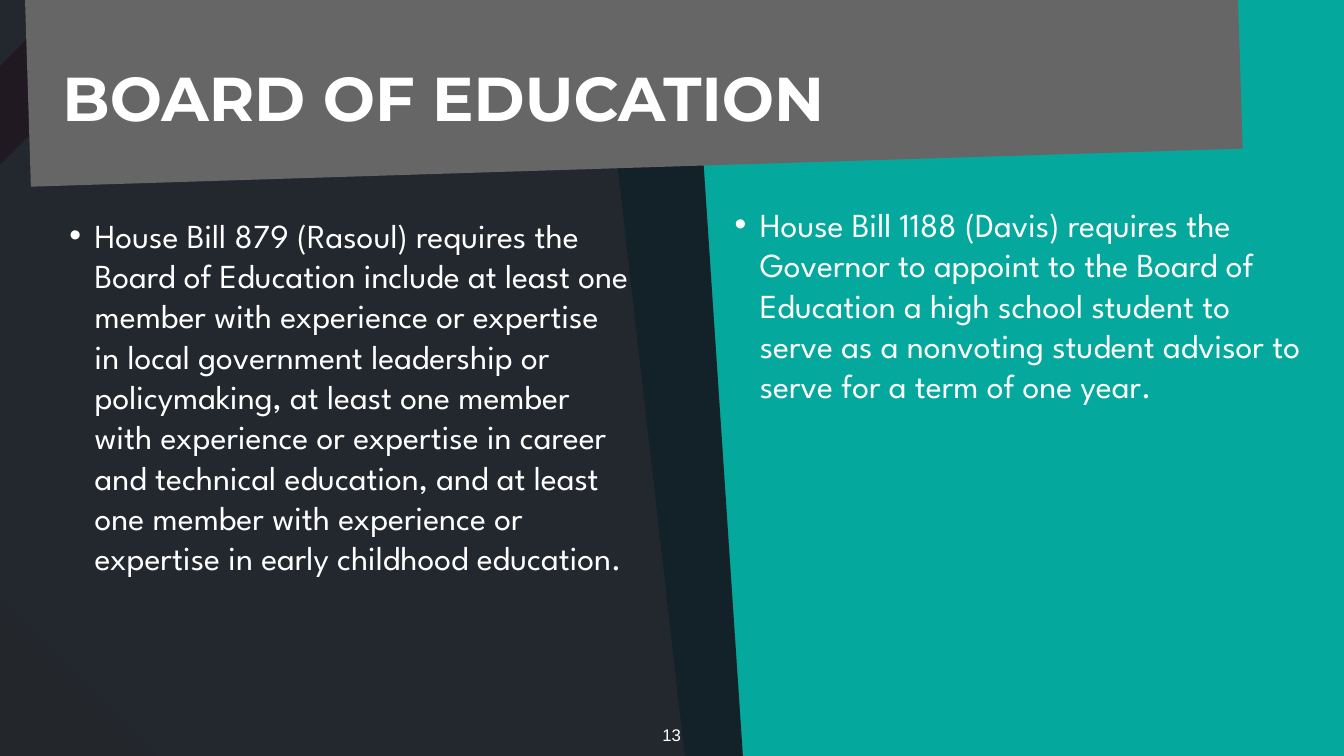
"""Build the Board of Education slide."""
from dataclasses import dataclass

from lxml.etree import SubElement
from pptx import Presentation
from pptx.dml.color import RGBColor
from pptx.enum.shapes import MSO_SHAPE as Shape
from pptx.enum.text import MSO_ANCHOR as Anchor, MSO_AUTO_SIZE as Fit, PP_ALIGN as Align
from pptx.oxml.ns import qn
from pptx.util import Inches, Pt

WIDTH, HEIGHT = Inches(26.67), Inches(15)
WHITE = "FFFFFF"


@dataclass
class Box:
    """A frame in percent of the slide's width and height."""
    left: float
    top: float
    width: float
    height: float

    def frame(self) -> dict:
        """Return the frame as position and size attributes."""
        return {"left": round(WIDTH * self.left / 100), "top": round(HEIGHT * self.top / 100),
                "width": round(WIDTH * self.width / 100), "height": round(HEIGHT * self.height / 100)}


@dataclass
class Panel:
    """A tilted flat panel, with its opacity in percent."""
    box: Box
    tilt: float
    color: str
    opacity: int = 100
    kind: Shape = Shape.RECTANGLE


@dataclass
class Text:
    """A paragraph with its frame and format."""
    box: Box
    words: str
    size: float
    font: str
    inset: float = 0.06
    bold: bool = False
    bullet: bool = False
    align: Align = Align.LEFT
    anchor: Anchor = Anchor.TOP
    spacing: float = 1.0


PANELS = [
    Panel(Box(-8.29, -0.2, 28.76, 9.27), 315, "C92D3A"),
    Panel(Box(-9.82, 85.13, 21.86, 19.47), 225, "ECE4B8"),
    Panel(Box(-46.46, 6.87, 49.27, 142.6), 315, "D5D5D5", 6, Shape.ROUNDED_RECTANGLE),
    Panel(Box(47.28, -33.67, 59.36, 146.8), 353.5, "05A89D"),
    Panel(Box(-14.55, -12.4, 68.05, 133.6), 356.2, "141820", 93),
    Panel(Box(1.39, -78.4, 90.21, 100.6), 358.2, "666666"),
]
TITLE = Text(Box(4.42, 1.73, 90.1, 16.27), "BOARD OF EDUCATION", 88.4, "Montserrat",
             bold=True, anchor=Anchor.BOTTOM, spacing=0.8)
BILLS = [
    (Box(54.29, 26.33, 43.46, 69.87),
     "House Bill 1188 (Davis) requires the Governor to appoint to the Board of Education "
     "a high school student to serve as a nonvoting student advisor to serve for a term of one year."),
    (Box(4.8, 27.73, 42.56, 69.87),
     "House Bill 879 (Rasoul) requires the Board of Education include at least one member with "
     "experience or expertise in local government leadership or policymaking, at least one member "
     "with experience or expertise in career and technical education, and at least one member "
     "with experience or expertise in early childhood education."),
]
PAGE = Text(Box(49.04, 95.4, 1.87, 3.47), "13", 24, "Arial", align=Align.CENTER)


def assign(target, values: dict) -> None:
    """Set each named attribute of the target."""
    for name, value in values.items():
        setattr(target, name, value)


def paint(fill, color: str) -> None:
    """Give a fill one solid colour."""
    fill.solid()
    fill.fore_color.rgb = RGBColor.from_string(color)


def add_panel(slide, panel: Panel) -> None:
    """Draw a tilted panel without line or shadow."""
    sp = slide.shapes.add_shape(panel.kind, **panel.box.frame())
    sp.rotation = panel.tilt
    sp.shadow.inherit = False
    sp.line.fill.background()
    paint(sp.fill, panel.color)
    if panel.kind == Shape.ROUNDED_RECTANGLE:
        sp.adjustments[0] = 0.29
    if panel.opacity < 100:
        color = sp._element.spPr.find(f".//{qn('a:srgbClr')}")
        SubElement(color, qn("a:alpha"), val=str(panel.opacity * 1000))


def add_bullet(p) -> None:
    """Give a paragraph a hanging white bullet."""
    pPr = p._p.get_or_add_pPr()
    pPr.set("marL", str(Inches(0.5)))
    pPr.set("indent", str(-Inches(0.51)))
    SubElement(SubElement(pPr, qn("a:buClr")), qn("a:srgbClr"), val=WHITE)
    SubElement(pPr, qn("a:buFont"), typeface="Arial")
    SubElement(pPr, qn("a:buChar"), char="•")


def write(sp, text: Text) -> None:
    """Fill a text shape with its formatted paragraph."""
    assign(sp, text.box.frame())
    tf = sp.text_frame
    margins = {f"margin_{side}": Inches(text.inset) for side in ("left", "top", "right", "bottom")}
    assign(tf, {"word_wrap": True, "auto_size": Fit.NONE, "vertical_anchor": text.anchor, **margins})
    p = tf.paragraphs[0]
    assign(p, {"alignment": text.align, "line_spacing": text.spacing})
    if text.bullet:
        add_bullet(p)
    r = p.add_run()
    r.text = text.words
    assign(r.font, {"name": text.font, "size": Pt(text.size), "bold": text.bold})
    paint(r.font.fill, WHITE)


def main() -> None:
    """Build and save the slide."""
    prs = Presentation()
    assign(prs, {"slide_width": WIDTH, "slide_height": HEIGHT})
    slide = prs.slides.add_slide(prs.slide_layouts[5])
    paint(slide.background.fill, "EFEFEF")
    for panel in PANELS:
        add_panel(slide, panel)
    title = slide.shapes.title
    slide.shapes._spTree.append(title._element)
    write(title, TITLE)
    bills = [Text(box, words, 48, "League Spartan", 0.1, bullet=True) for box, words in BILLS]
    for text in [*bills, PAGE]:
        write(slide.shapes.add_textbox(**text.box.frame()), text)
    prs.save("out.pptx")


if __name__ == "__main__":
    main()
